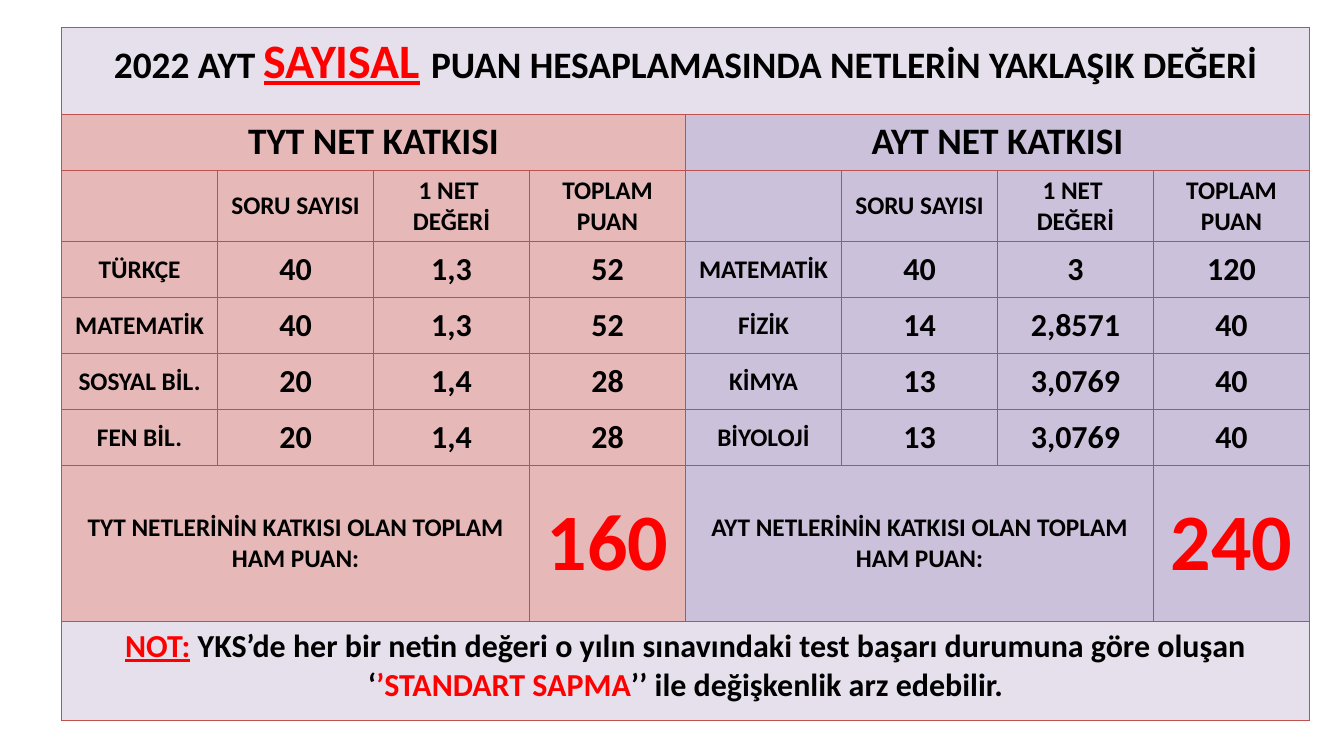
from lxml.etree import SubElement
from pptx import Presentation
from pptx.dml.color import RGBColor
from pptx.enum.text import MSO_ANCHOR, PP_ALIGN
from pptx.oxml.ns import qn
from pptx.util import Cm, Pt

COLORS = {
    "pale": "E6E0EC", "rose": "E6B9B8", "lilac": "CCC1DA",
    "line": "C0504D", "black": "000000", "red": "FF0000",
}
HEADS = [["SORU SAYISI"], ["1 NET ", "DEĞERİ"], ["TOPLAM PUAN"]]
SIDES = [
    ("TYT", "rose", "160", [
        ("TÜRKÇE", "40", "1,3", "52"),
        ("MATEMATİK", "40", "1,3", "52"),
        ("SOSYAL BİL.", "20", "1,4", "28"),
        ("FEN BİL.", "20", "1,4", "28"),
    ]),
    ("AYT", "lilac", "240", [
        ("MATEMATİK", "40", "3", "120"),
        ("FİZİK", "14", "2,8571", "40"),
        ("KİMYA", "13", "3,0769", "40"),
        ("BİYOLOJİ", "13", "3,0769", "40"),
    ]),
]
ROWS = [2.3, 1.48, 1.88] + [1.48] * 4 + [4.14, 2.6]
COLS = 8
TITLE = [
    ("2022 AYT ", 28, "black", False),
    ("SAYISAL", 36, "red", True),
    (" ", 36, "black", False),
    ("PUAN HESAPLAMASINDA NETLERİN YAKLAŞIK DEĞERİ", 28, "black", False),
]
NOTE = [
    ("NOT:", 24, "red", True),
    (" YKS’de her bir netin değeri o yılın sınavındaki test başarı durumuna göre oluşan ‘",
     24, "black", False),
    ("’STANDART SAPMA", 24, "red", False),
    ("’’ ile değişkenlik arz edebilir.", 24, "black", False),
]


def color(name):
    """Return the named colour."""
    return RGBColor.from_string(COLORS[name])


def paint(cell, fill):
    """Fill a cell and line its four sides."""
    props = cell._tc.get_or_add_tcPr()
    for side in ("a:lnL", "a:lnR", "a:lnT", "a:lnB"):
        line = SubElement(props, qn(side), w=str(Pt(1)))
        solid = SubElement(line, qn("a:solidFill"))
        SubElement(solid, qn("a:srgbClr"), val=COLORS["line"])
    cell.fill.solid()
    cell.fill.fore_color.rgb = color(fill)


def write(cell, lines, anchor=MSO_ANCHOR.MIDDLE):
    """Write centred lines, each a list of (text, size, colour, underline)."""
    cell.vertical_anchor = anchor
    frame = cell.text_frame
    for i, runs in enumerate(lines):
        para = frame.add_paragraph() if i else frame.paragraphs[0]
        para.alignment = PP_ALIGN.CENTER
        for text, size, tint, under in runs:
            run = para.add_run()
            run.text = text
            font = run.font
            font.name, font.size, font.bold = "Calibri", Pt(size), True
            font.color.rgb = color(tint)
            if under:
                font.underline = True


def label(cell, text, size, tint="black", anchor=MSO_ANCHOR.MIDDLE):
    """Write one plain line in a cell."""
    write(cell, [[(text, size, tint, False)]], anchor)


def banner(table, row, runs):
    """Write a row that spans the whole table."""
    table.cell(row, 0).merge(table.cell(row, COLS - 1))
    write(table.cell(row, 0), [runs], MSO_ANCHOR.TOP)


def block(table, left, exam, total, data):
    """Write the half of the table for one exam."""
    table.cell(1, left).merge(table.cell(1, left + 3))
    label(table.cell(1, left), f"{exam} NET KATKISI", 28, anchor=MSO_ANCHOR.TOP)
    for c, lines in enumerate(HEADS, left + 1):
        write(table.cell(2, c), [[(text, 19, "black", False)] for text in lines])
    for r, values in enumerate(data, 3):
        for c, text in enumerate(values):
            label(table.cell(r, left + c), text, 24 if c else 19)
    table.cell(7, left).merge(table.cell(7, left + 2))
    label(table.cell(7, left),
          f"{exam} NETLERİNİN KATKISI OLAN TOPLAM HAM PUAN:", 19)
    label(table.cell(7, left + 3), total, 60, "red")


def grid(slide):
    """Add the painted empty table."""
    table = slide.shapes.add_table(
        len(ROWS), COLS, Cm(1.63), Cm(0.73), Cm(33.02), Cm(sum(ROWS))).table
    table.first_row = table.horz_banding = False
    for r, height in enumerate(ROWS):
        table.rows[r].height = Cm(height)
        for c in range(COLS):
            side = SIDES[c // 4][1]
            paint(table.cell(r, c), "pale" if r in (0, len(ROWS) - 1) else side)
    return table


def main():
    """Build the slide and save it."""
    deck = Presentation()
    deck.slide_width, deck.slide_height = Cm(35.56), Cm(20)
    slide = deck.slides.add_slide(deck.slide_layouts[6])
    table = grid(slide)
    banner(table, 0, TITLE)
    for i, (exam, _, total, data) in enumerate(SIDES):
        block(table, 4 * i, exam, total, data)
    banner(table, len(ROWS) - 1, NOTE)
    deck.save("out.pptx")


if __name__ == "__main__":
    main()
